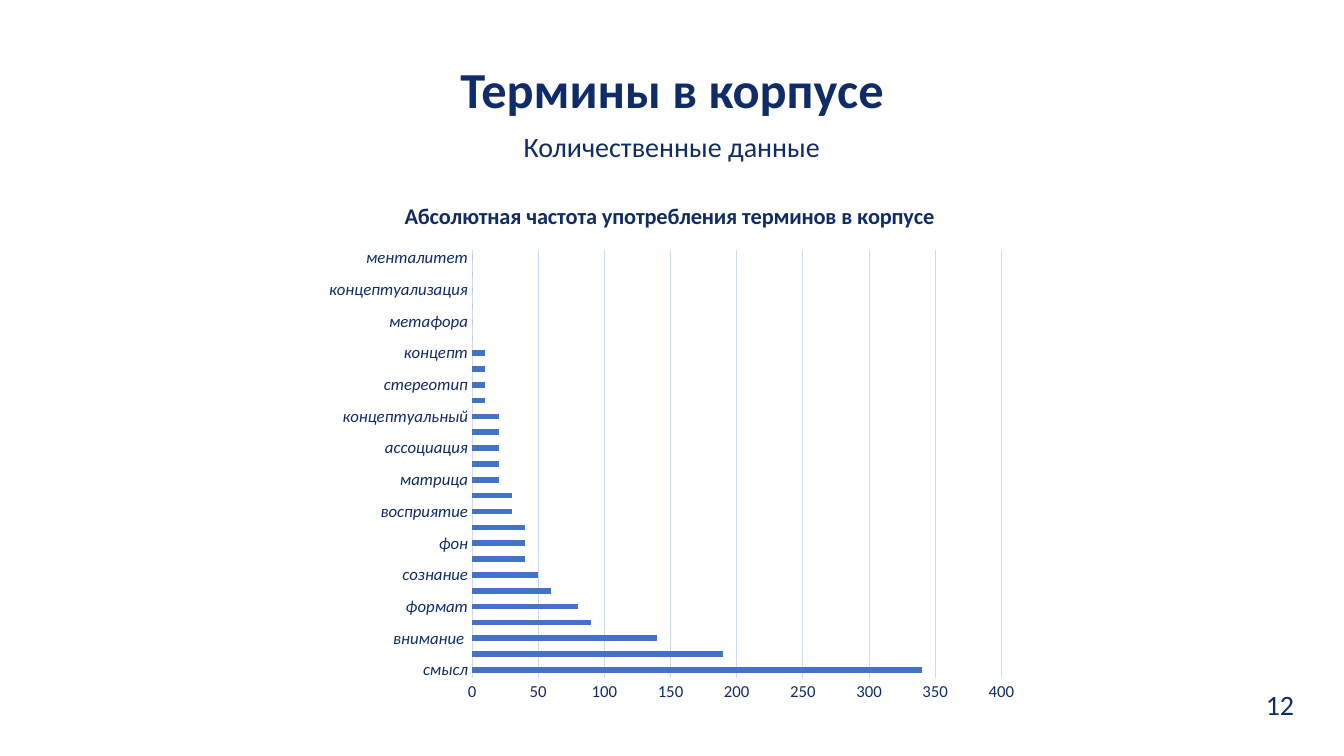
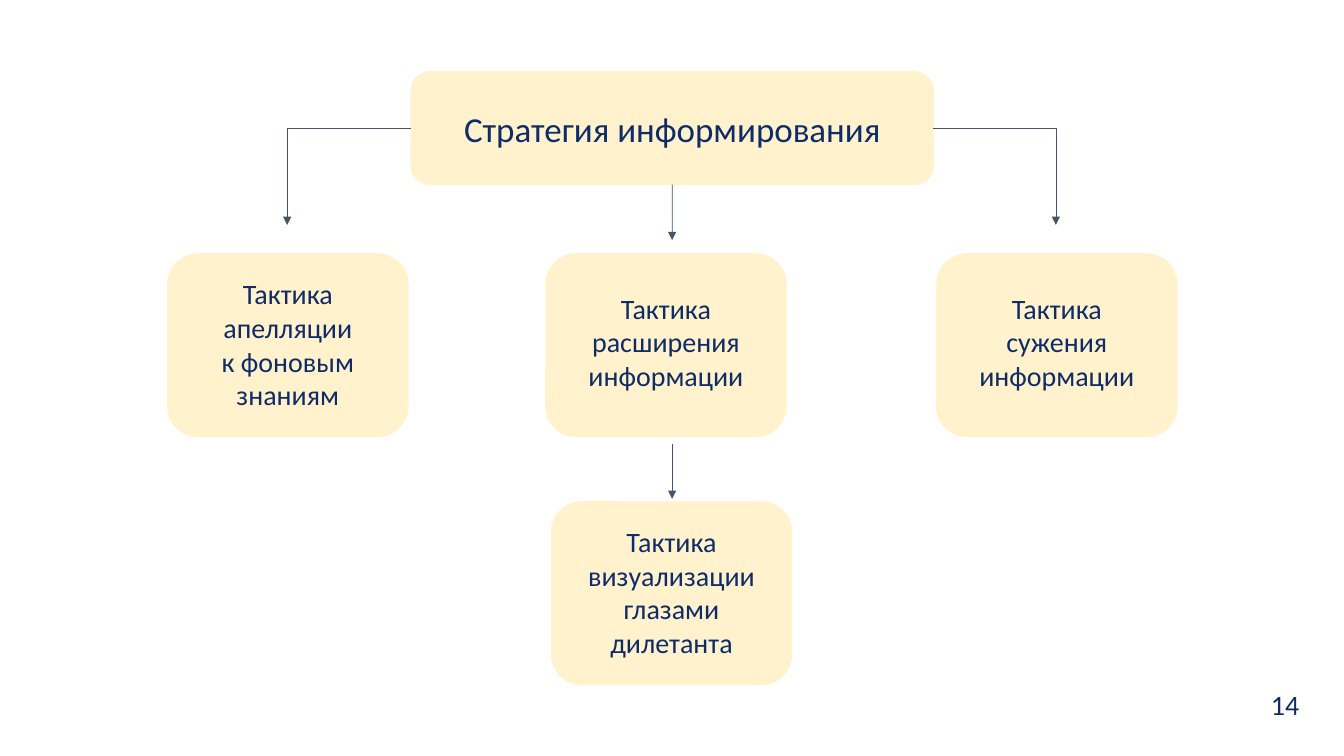
from dataclasses import dataclass

from pptx import Presentation
from pptx import util as u
from pptx.chart import data as cd
from pptx.dml.color import RGBColor
from pptx.enum import chart as ch, shapes, text
from pptx.oxml import parse_xml
from pptx.oxml.ns import nsdecls, qn


@dataclass(frozen=True)
class Theme:
    font: str = "Calibri"
    ink: str = "0F2C68"
    box: str = "FFF2CC"
    arrow: str = "44546A"
    grid: str = "CCDAF8"
    bar: str = "4472C4"
    title: float = 36
    heading: float = 25
    body: float = 20
    chart_title: float = 16
    axis: float = 12


T = Theme()

FREQUENCIES = {
    "смысл": 340, "знание": 190, "внимание ": 140, "память": 90, "формат": 80,
    "категория": 60, "сознание": 50, "схема": 40, "фон": 40, "сценарий": 40,
    "восприятие": 30, "когнитивный": 30, "матрица": 20, "прототип": 20,
    "ассоциация": 20, "картина мира": 20, "концептуальный": 20, "фигура": 10,
    "стереотип": 10, "ментальный": 10, "концепт": 10, "антропоцентризм": 0,
    "метафора": 0, "репрезентация": 0, "концептуализация": 0,
    "ассоциативный": 0, "менталитет": 0,
}

TACTICS = [
    (4.23, 6.4, 0.18, "Тактика апелляции\vк фоновым знаниям"),
    (13.76, 6.4, 0.3, "Тактика расширения информации"),
    (23.61, 6.4, 0.3, "Тактика сужения информации"),
    (13.9, 12.65, 0.2, "Тактика визуализации глазами дилетанта"),
]


def cm(*values):
    return [u.Cm(v) for v in values]


def assign(obj, **values):
    for name, value in values.items():
        setattr(obj, name, value)


def style(font, size, **extra):
    assign(font, name=T.font, size=u.Pt(size), **extra)
    font.color.rgb = RGBColor.from_string(T.ink)


def paint_line(line, color, width):
    line.color.rgb = RGBColor.from_string(color)
    line.width = u.Pt(width)


def write(sp, words, size, bold=False, align=text.PP_ALIGN.CENTER,
          side=0.25, bottom=0.13):
    tf = sp.text_frame
    assign(tf, word_wrap=True, auto_size=text.MSO_AUTO_SIZE.NONE,
           vertical_anchor=text.MSO_ANCHOR.MIDDLE,
           margin_left=u.Cm(side), margin_right=u.Cm(side),
           margin_bottom=u.Cm(bottom))
    p = tf.paragraphs[0]
    p.text = words
    p.alignment = align
    for r in p.runs:
        style(r.font, size, bold=bold)


def add_text(s, box, words, size, **options):
    write(s.shapes.add_textbox(*cm(*box)), words, size, **options)


def set_title(s, box, words, size, **options):
    sp = s.shapes.title
    assign(sp, **dict(zip(("left", "top", "width", "height"), cm(*box))))
    write(sp, words, size, **options)
    sp.element.getparent().append(sp.element)


def add_number(s, left, number):
    add_text(s, (left, 17.2, 1.47, 1.12), number, T.body,
             align=text.PP_ALIGN.LEFT)


def add_box(s, box):
    sp = s.shapes.add_shape(shapes.MSO_SHAPE.ROUNDED_RECTANGLE, *cm(*box))
    sp.shadow.inherit = False
    sp.fill.solid()
    sp.fill.fore_color.rgb = RGBColor.from_string(T.box)
    paint_line(sp.line, T.box, 1)
    return sp


def add_arrow(s, points, kind=shapes.MSO_CONNECTOR.STRAIGHT):
    c = s.shapes.add_connector(kind, *cm(*points))
    paint_line(c.line, T.arrow, 0.5)
    spPr = c.element.spPr
    spPr.get_or_add_ln().append(
        parse_xml(f'<a:tailEnd {nsdecls("a")} type="triangle"/>'))
    spPr.append(parse_xml(f'<a:effectLst {nsdecls("a")}/>'))
    return c


def add_corner_arrow(s, points):
    c = add_arrow(s, points, shapes.MSO_CONNECTOR.ELBOW)
    geometry = c.element.spPr.find(qn("a:prstGeom"))
    for old in geometry.findall(qn("a:avLst")):
        geometry.remove(old)
    geometry.append(parse_xml(
        f'<a:avLst {nsdecls("a")}><a:gd name="adj1" fmla="val 100000"/></a:avLst>'))


def place(part, index, inner=False, **fractions):
    for old in part.findall(qn("c:layout")):
        part.remove(old)
    target = '<c:layoutTarget val="inner"/>' if inner else ""
    modes = "".join(f'<c:{k}Mode val="edge"/>' for k in "xy")
    sizes = "".join(f'<c:{k} val="{v}"/>' for k, v in fractions.items())
    part.insert(index, parse_xml(
        f'<c:layout {nsdecls("c")}><c:manualLayout>{target}{modes}{sizes}'
        '</c:manualLayout></c:layout>'))


def add_bar_chart(s, box, title, values):
    data = cd.CategoryChartData()
    data.categories = list(values)
    data.add_series("Series 1", list(values.values()))
    chart = s.shapes.add_chart(
        ch.XL_CHART_TYPE.BAR_CLUSTERED, *cm(*box), data).chart
    assign(chart, has_legend=False, has_title=True)
    style(chart.font, 10)
    p = chart.chart_title.text_frame.paragraphs[0]
    r = p.add_run()
    r.text = title
    style(r.font, T.chart_title, bold=True)

    plot = chart.plots[0]
    assign(plot, gap_width=182, vary_by_categories=False)
    fill = plot.series[0].format.fill
    fill.solid()
    fill.fore_color.rgb = RGBColor.from_string(T.bar)

    for axis, italic in ((chart.category_axis, True), (chart.value_axis, False)):
        assign(axis, major_tick_mark=ch.XL_TICK_MARK.NONE,
               minor_tick_mark=ch.XL_TICK_MARK.NONE)
        style(axis.tick_labels.font, T.axis, italic=italic)
    paint_line(chart.category_axis.format.line, T.grid, 0.75)
    assign(chart.value_axis, minimum_scale=0, maximum_scale=400, major_unit=50,
           has_major_gridlines=True)
    chart.value_axis.format.line.fill.background()
    paint_line(chart.value_axis.major_gridlines.format.line, T.grid, 0.75)

    root = chart.element.find(qn("c:chart"))
    place(root.find(qn("c:title")), 1, x=0.12, y=0.03)
    place(root.find(qn("c:plotArea")), 0, inner=True, x=0.22, y=0.13, w=0.74, h=0.8)


def build_terms(s):
    set_title(s, (10.21, 1.33, 13.46, 1.8), "Термины в корпусе", T.title, bold=True)
    add_text(s, (12.83, 3.13, 8.2, 1.12), "Количественные данные", T.body)
    add_bar_chart(s, (7.93, 4.55, 18.03, 13.48),
                  "Абсолютная частота употребления терминов в корпусе", FREQUENCIES)
    add_number(s, 31.65, "12")


def build_strategy(s):
    left, top, width, height = 10.36, 1.81, 13.16, 2.84
    center, side = left + width / 2, 3.23
    strategy = add_box(s, (left, top, width, height))
    set_title(s, (left, top, width, height), "Стратегия информирования", T.heading)
    for x, y, bottom, words in TACTICS:
        write(add_box(s, (x, y, 6.05, 4.6)), words, T.body, side=0.48, bottom=bottom)
    for start, end in ((left, 7.24), (left + width, 26.61)):
        add_corner_arrow(s, (start, side, end, 5.67))
    down = add_arrow(s, (center, top + height, center, 6.05))
    down.begin_connect(strategy, 2)
    add_arrow(s, (center, 11.2, center, 12.57))
    add_number(s, 31.78, "14")


def main():
    prs = Presentation()
    prs.slide_width, prs.slide_height = cm(33.87, 19.05)
    for build in (build_terms, build_strategy):
        build(prs.slides.add_slide(prs.slide_layouts[5]))
    prs.save("out.pptx")


if __name__ == "__main__":
    main()
